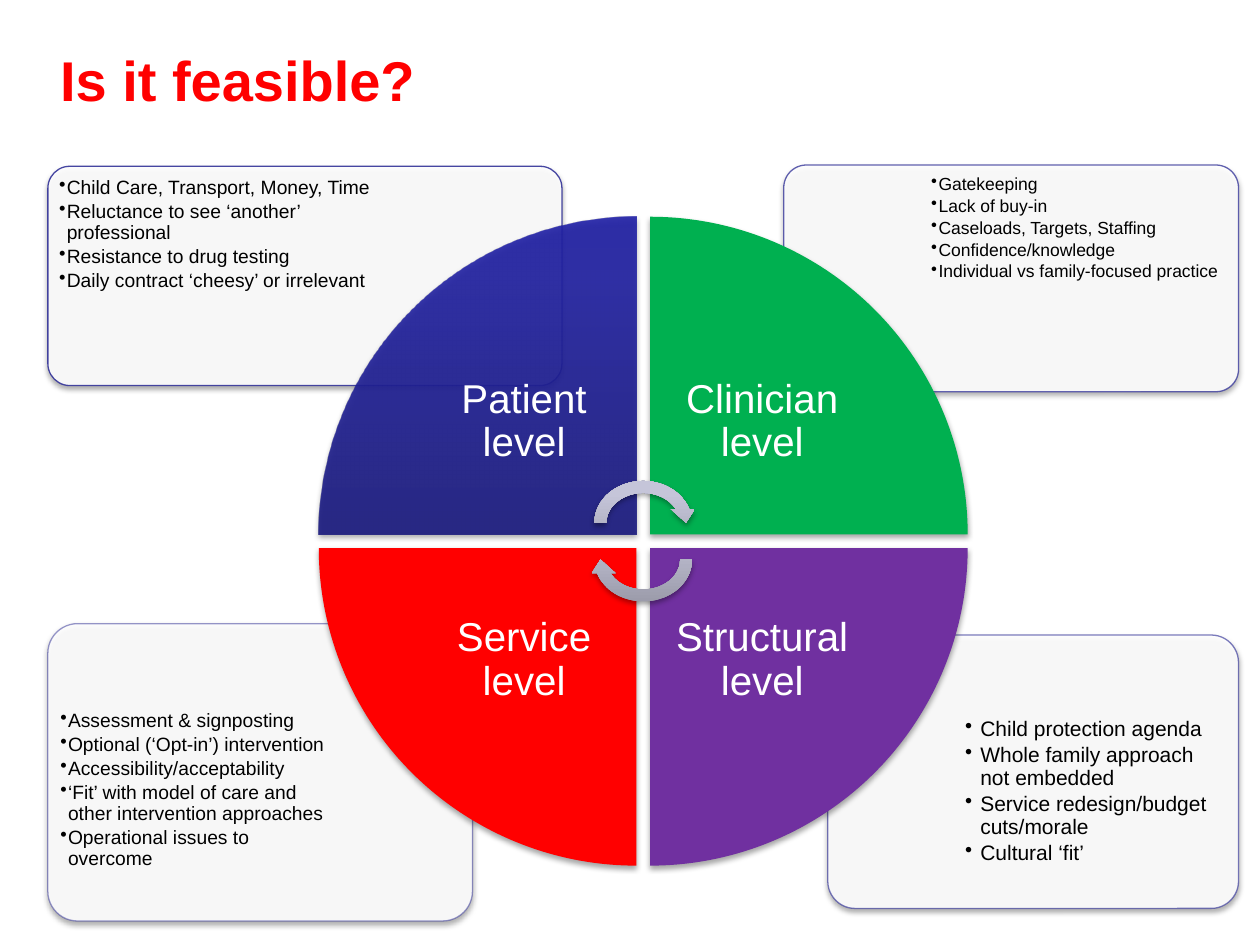
from lxml import etree
from pptx import Presentation
from pptx.dml.color import RGBColor
from pptx.enum.shapes import MSO_SHAPE
from pptx.enum.text import MSO_ANCHOR, PP_ALIGN
from pptx.oxml.ns import qn
from pptx.util import Inches, Pt

ROUNDED = MSO_SHAPE.ROUNDED_RECTANGLE
WEDGE = MSO_SHAPE.PIE_WEDGE
ARROW = MSO_SHAPE.CIRCULAR_ARROW
TOP, MIDDLE = MSO_ANCHOR.TOP, MSO_ANCHOR.MIDDLE
LEFT, CENTER = PP_ALIGN.LEFT, PP_ALIGN.CENTER

FONT = "Arial"
BLACK = RGBColor(0x00, 0x00, 0x00)
WHITE = RGBColor(0xFF, 0xFF, 0xFF)
RED = RGBColor(0xFF, 0x00, 0x00)
GREEN = RGBColor(0x00, 0xB0, 0x50)
PURPLE = RGBColor(0x70, 0x30, 0xA0)
INDIGO = RGBColor(0x33, 0x33, 0x99)
NAVY_STOPS = [(0, RGBColor(0x1B, 0x1B, 0x7E)), (80, RGBColor(0x23, 0x23, 0xA3)),
              (100, RGBColor(0x20, 0x20, 0xA6))]
GREY_STOPS = [(0, RGBColor(0x98, 0x98, 0xA7)), (80, RGBColor(0xC5, 0xC5, 0xD9)),
              (100, RGBColor(0xC6, 0xC6, 0xDA))]

WEDGE_SIZE = 2.52
WEDGE_STEP = 2.63
WHEEL_LEFT, WHEEL_TOP = 2.53, 1.72
LABEL_SIZE = 1.78

# card box, line opacity, text box, inset, indent, font size, bullets
CARDS = [
    ((6.57, 5.04, 3.26, 2.17), 63, (7.59, 5.63, 2.19, 1.53), 0.07, 0.12, 12,
     ["Child protection agenda", "Whole family approach not embedded",
      "Service redesign/budget cuts/morale", "Cultural ‘fit’"]),
    ((0.38, 4.95, 3.37, 2.36), 50, (0.43, 5.59, 2.25, 1.67), 0.05, 0.06, 11,
     ["Assessment & signposting", "Optional (‘Opt-in’) intervention",
      "Accessibility/acceptability",
      "‘Fit’ with model of care and other intervention approaches",
      "Operational issues to overcome"]),
    ((6.22, 1.31, 3.61, 1.8), 77, (7.35, 1.35, 2.44, 1.27), 0.04, 0.06, 10,
     ["Gatekeeping", "Lack of buy-in", "Caseloads, Targets, Staffing",
      "Confidence/knowledge", "Individual vs family-focused practice"]),
    ((0.38, 1.32, 4.08, 1.74), 90, (0.42, 1.36, 2.78, 1.23), 0.05, 0.06, 11,
     ["Child Care, Transport, Money, Time", "Reluctance to see ‘another’ professional",
      "Resistance to drug testing", "Daily contract ‘cheesy’ or irrelevant"]),
]

# label, column, row, rotation, fill, opacity
WEDGES = [
    ("Patient level", 0, 0, 0, NAVY_STOPS, 90),
    ("Clinician level", 1, 0, 90, GREEN, 100),
    ("Structural level", 1, 1, 180, PURPLE, 100),
    ("Service level", 0, 1, 270, RED, 100),
]


def add_child(parent, tag, **attributes):
    return etree.SubElement(parent, qn(tag), {k: str(v) for k, v in attributes.items()})


def set_opacity(parent, percent):
    """Apply an opacity to every RGB colour below the element."""
    if percent < 100:
        for color in parent.iter(qn("a:srgbClr")):
            add_child(color, "a:alpha", val=percent * 1000)


def set_gradient(sp, stops):
    """Fill from bottom to top, independent of the shape's rotation."""
    sp.fill.gradient()
    grad = sp._element.spPr.find(qn("a:gradFill"))
    grad.set("rotWithShape", "0")
    grad.find(qn("a:lin")).set("ang", str(270 * 60000))
    stop_list = grad.find(qn("a:gsLst"))
    for old in list(stop_list):
        stop_list.remove(old)
    for position, color in stops:
        stop = add_child(stop_list, "a:gs", pos=position * 1000)
        add_child(stop, "a:srgbClr", val=color)


def add_shadow(sp):
    sp.shadow.inherit = False
    effects = sp._element.spPr.find(qn("a:effectLst"))
    shadow = add_child(effects, "a:outerShdw", blurRad=Pt(3.1), dist=Pt(1.8),
                       dir=90 * 60000, rotWithShape=0)
    color = add_child(shadow, "a:srgbClr", val=BLACK)
    add_child(color, "a:alpha", val=35000)


def add_filled_shape(slide, kind, box, fill, opacity=100, rotation=0):
    sp = slide.shapes.add_shape(kind, *map(Inches, box))
    sp.rotation = rotation
    if isinstance(fill, list):
        set_gradient(sp, fill)
    else:
        sp.fill.solid()
        sp.fill.fore_color.rgb = fill
    set_opacity(sp._element.spPr, opacity)
    sp.line.fill.background()
    add_shadow(sp)
    return sp


def add_text(slide, box, lines, size, color, inset=None, anchor=MIDDLE,
             align=LEFT, bold=False, indent=None):
    """Add a text box; an indent turns its lines into bullets."""
    tf = slide.shapes.add_textbox(*map(Inches, box)).text_frame
    tf.word_wrap = True
    tf.vertical_anchor = anchor
    if inset is not None:
        tf.margin_left = tf.margin_right = Inches(inset)
        tf.margin_top = tf.margin_bottom = Inches(inset)
    for i, line in enumerate(lines):
        p = tf.paragraphs[0] if i == 0 else tf.add_paragraph()
        p.alignment = align
        p.line_spacing = 0.9
        if indent is not None:
            p.level = 1
            p.space_after = Pt(round(size * 0.17, 1))
            pPr = p._p.get_or_add_pPr()
            pPr.set("marL", str(Inches(indent)))
            pPr.set("indent", str(-Inches(indent)))
            add_child(pPr, "a:buChar", char="•")
        r = p.add_run()
        r.text = line
        r.font.name = FONT
        r.font.size = Pt(size)
        r.font.bold = bold
        r.font.color.rgb = color


def add_card(slide, box, line_opacity, text_box, inset, indent, size, bullets):
    sp = add_filled_shape(slide, ROUNDED, box, WHITE, 90)
    sp.adjustments[0] = 0.1
    sp.line.color.rgb = INDIGO
    sp.line.width = Pt(0.75)
    set_opacity(sp._element.spPr.find(qn("a:ln")), line_opacity)
    add_text(slide, text_box, bullets, size, BLACK, inset, TOP, indent=indent)


def add_wedge(slide, label, column, row, rotation, fill, opacity):
    """Add a quarter of the wheel with its label against the wheel's centre."""
    left = WHEEL_LEFT + column * WEDGE_STEP
    top = WHEEL_TOP + row * WEDGE_STEP
    add_filled_shape(slide, WEDGE, (left, top, WEDGE_SIZE, WEDGE_SIZE),
                     fill, opacity, rotation)
    shift = WEDGE_SIZE - LABEL_SIZE
    label_box = (left + (1 - column) * shift, top + (1 - row) * shift,
                 LABEL_SIZE, LABEL_SIZE)
    add_text(slide, label_box, [label], 23, WHITE, 0.18, align=CENTER)


def main():
    prs = Presentation()
    prs.slide_width, prs.slide_height = Inches(10), Inches(7.5)
    slide = prs.slides.add_slide(prs.slide_layouts[6])
    add_text(slide, (0.38, 0, 9.24, 1.32), ["Is it feasible?"], 32, RED, bold=True)
    for card in CARDS:
        add_card(slide, *card)
    for wedge in WEDGES:
        add_wedge(slide, *wedge)
    for top, rotation in ((3.77, 0), (4.06, 180)):
        add_filled_shape(slide, ARROW, (4.67, top, 0.87, 0.76), GREY_STOPS,
                         rotation=rotation)
    prs.save("out.pptx")


if __name__ == "__main__":
    main()
